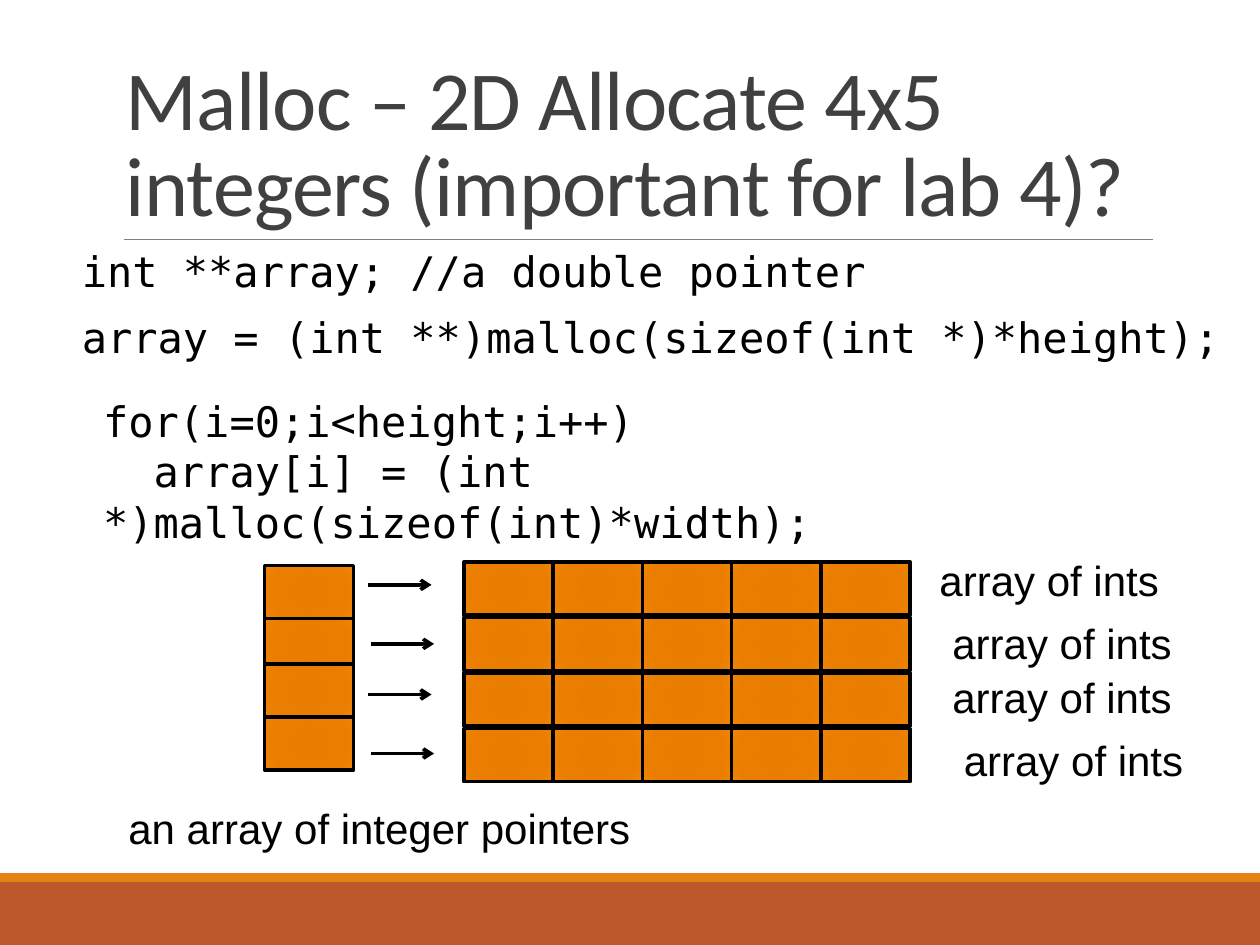
from dataclasses import dataclass

from lxml import etree
from pptx import Presentation
from pptx.dml.color import RGBColor
from pptx.enum.shapes import MSO_CONNECTOR, MSO_SHAPE
from pptx.enum.text import MSO_ANCHOR, MSO_AUTO_SIZE
from pptx.oxml import parse_xml
from pptx.oxml.ns import nsdecls, qn
from pptx.util import Cm, Pt

RECT = MSO_SHAPE.RECTANGLE
LINE = MSO_CONNECTOR.STRAIGHT
BOTTOM = MSO_ANCHOR.BOTTOM
GROW = MSO_AUTO_SIZE.SHAPE_TO_FIT_TEXT


@dataclass(frozen=True)
class Theme:
    ink: str = "000000"
    head: str = "404040"
    rule: str = "808080"
    base: str = "BD582C"
    strip: str = "E48312"
    glow: tuple = ((0, "E57B00"), (34, "E87D00"), (70, "EB7E00"), (100, "EF8407"))
    big: float = 48
    body: float = 24
    thin: float = 0.5
    thick: float = 2
    title: str = "Calibri"
    code: str = "DejaVu Sans Mono"
    sans: str = "Arial"


THEME = Theme()
CELL_W, CELL_H = 1.8, 1.07
GRID_X, GRID_Y, STEP = 9.35, 11.33, 1.12
ROWS, COLS = 4, 5
STACK_X = 5.33
STACK = (11.4, 12.47, 13.39, 14.45)
ARROWS = ((7.42, 11.79), (7.47, 12.98), (7.42, 14), (7.47, 15.19))
LABELS = ((18.69, 11.05), (18.95, 12.32), (18.95, 13.41), (19.18, 14.68))


def color(code):
    return RGBColor.from_string(code)


def apply(item, form):
    for name, value in form.items():
        setattr(item, name, value)


def add_text(slide, spot, lines, face, size=THEME.body, ink=THEME.ink, frame=None):
    box = slide.shapes.add_textbox(*map(Cm, spot))
    text = box.text_frame
    apply(text, {"word_wrap": True, "auto_size": GROW, **(frame or {})})
    text.text = "\n".join(lines)
    for para in text.paragraphs:
        font = para.runs[0].font
        apply(font, {"name": face, "size": Pt(size)})
        font.color.rgb = color(ink)
    return text.paragraphs


def add_title(slide, spot, words):
    form = {"auto_size": MSO_AUTO_SIZE.NONE, "vertical_anchor": BOTTOM}
    para = add_text(slide, spot, [words], THEME.title, THEME.big, THEME.head, form)[0]
    para.line_spacing = 0.85
    para.runs[0].font._element.set("spc", "-50")


def add_band(slide, spot, fill):
    band = slide.shapes.add_shape(RECT, *map(Cm, spot))
    band.shadow.inherit = False
    band.fill.solid()
    band.fill.fore_color.rgb = color(fill)
    band.line.fill.background()


def add_line(slide, start, end, ink, width, arrow=False):
    line = slide.shapes.add_connector(LINE, *map(Cm, start + end))
    line.line.color.rgb = color(ink)
    line.line.width = Pt(width)
    if arrow:
        tail = etree.SubElement(line.line._get_or_add_ln(), qn("a:tailEnd"))
        tail.set("type", "arrow")
    etree.SubElement(line._element.spPr, qn("a:effectLst"))


def glow_fill():
    stops = "".join(
        f'<a:gs pos="{pos * 1000}"><a:srgbClr val="{code}"/></a:gs>'
        for pos, code in THEME.glow
    )
    rect = " ".join(f'{side}="100000"' for side in "ltrb")
    return parse_xml(
        f'<a:gradFill {nsdecls("a")}><a:gsLst>{stops}</a:gsLst>'
        f'<a:path path="circle"><a:fillToRect {rect}/></a:path></a:gradFill>'
    )


def add_cells(slide, spots):
    group = slide.shapes.add_group_shape()
    for left, top in spots:
        cell = group.shapes.add_shape(RECT, *map(Cm, (left, top, CELL_W, CELL_H)))
        cell.shadow.inherit = False
        cell._element.spPr.find(qn("a:prstGeom")).addnext(glow_fill())
        cell.line.color.rgb = color(THEME.ink)
        cell.line.width = Pt(THEME.thick)


def add_code(slide):
    add_text(slide, (1.4, 4.83, 21.23, 1.27),
             ["int **array; //a double pointer"], THEME.code)
    add_text(slide, (1.4, 6.15, 24, 1.27),
             ["array = (int **)malloc(sizeof(int *)*height);"], THEME.code)
    loop = add_text(slide, (1.83, 7.85, 23.24, 3.33),
                    ["for(i=0;i<height;i++)",
                     "array[i] = (int *)malloc(sizeof(int)*width);"], THEME.code)
    loop[1]._p.get_or_add_pPr().set("indent", str(Cm(1.02)))


def main():
    deck = Presentation()
    apply(deck, {"slide_width": Cm(25.4), "slide_height": Cm(19.05)})
    slide = deck.slides.add_slide(deck.slide_layouts[6])

    add_band(slide, (0, 17.78, 25.4, 1.27), THEME.base)
    add_band(slide, (0, 17.6, 25.4, 0.18), THEME.strip)
    add_line(slide, (2.49, 4.83), (23.24, 4.83), THEME.rule, THEME.thin)
    add_title(slide, (2.29, 0.79, 20.95, 4.04),
              "Malloc – 2D Allocate 4x5 integers (important for lab 4)?")
    add_code(slide)

    add_cells(slide, [(STACK_X, top) for top in STACK])
    add_text(slide, (2.34, 16.05, 11.81, 1.27),
             ["an array of integer pointers"], THEME.sans)
    for left, top in ARROWS:
        add_line(slide, (left, top), (left + 1.28, top), THEME.ink, THEME.thick, True)
    for row in range(ROWS):
        top = GRID_Y + row * STEP
        add_cells(slide, [(GRID_X + col * CELL_W, top) for col in range(COLS)])
    for left, top in LABELS:
        add_text(slide, (left, top, 6.35, 1.27), ["array of ints"], THEME.sans)

    deck.save("out.pptx")


if __name__ == "__main__":
    main()
